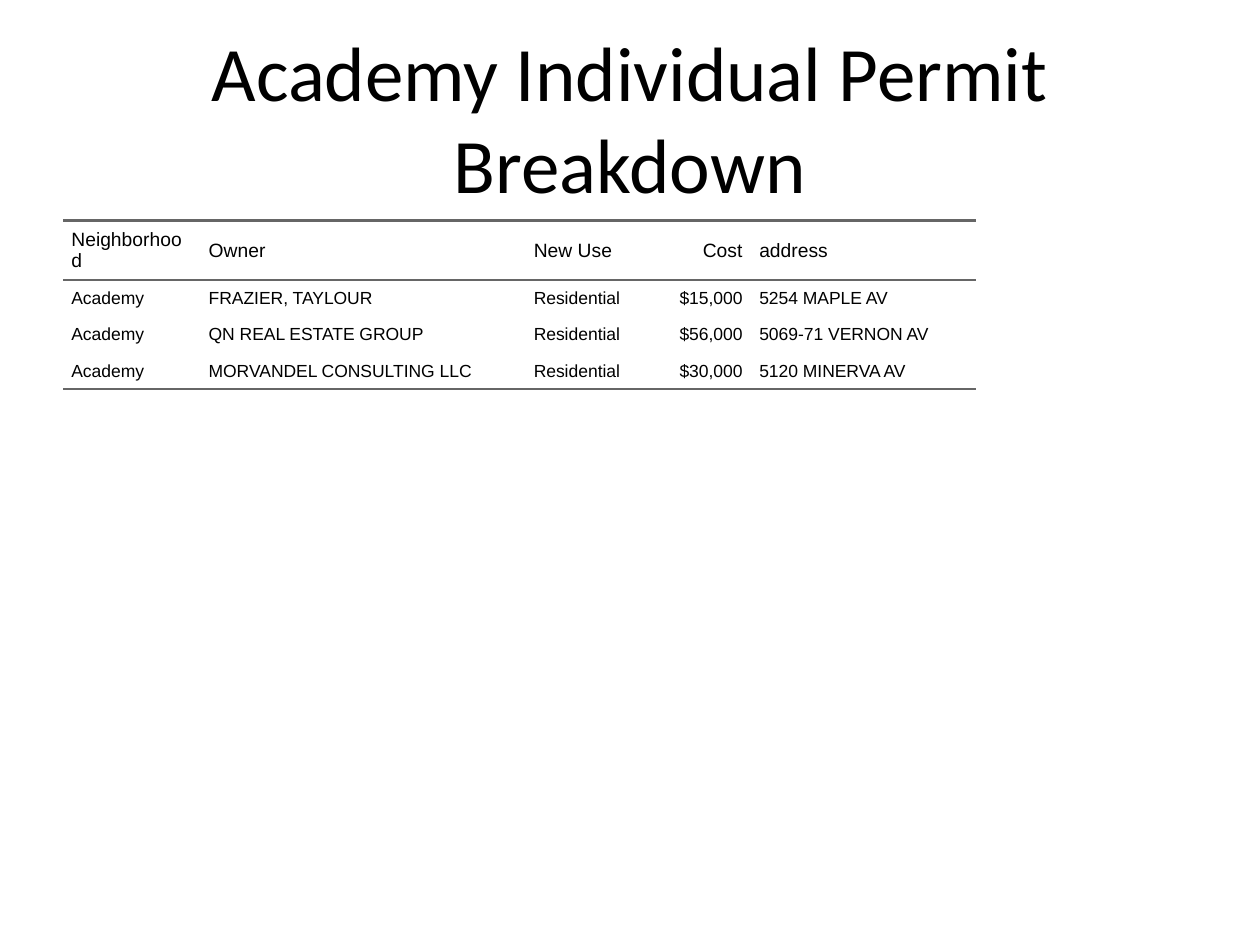
"""Build the Academy permit breakdown slide."""
from dataclasses import dataclass

from lxml import etree
from pptx import Presentation
from pptx.dml.color import RGBColor
from pptx.enum.text import MSO_ANCHOR, PP_ALIGN
from pptx.oxml.ns import qn
from pptx.util import Inches, Pt

MIDDLE = MSO_ANCHOR.MIDDLE
LEFT, CENTER, RIGHT = PP_ALIGN.LEFT, PP_ALIGN.CENTER, PP_ALIGN.RIGHT
PLAIN_STYLE = "{2D5ABB26-0587-4C30-8999-92F81FD0307C}"


@dataclass(frozen=True)
class Theme:
    """Fonts, sizes and colours of the slide."""
    title_font: str = "Calibri"
    table_font: str = "Arial"
    title_size: float = 44
    header_size: float = 11
    body_size: float = 10
    text: str = "000000"
    rule: str = "666666"
    rule_width: float = 1.5


THEME = Theme()
WIDTH, HEIGHT = Inches(10), Inches(7.5)
MARGIN = 0.05
TITLE_TOP, TITLE_HEIGHT = 0.04, 0.167
TABLE_TOP, TABLE_HEIGHT = 1.75, 4.95
COLUMNS = [1.09, 2.58, 1.04, 0.75, 1.79]
ROW_HEIGHT = 0.25
CELL_PAD = 4.8
CELL_SPACING = 5
COST_COLUMN = 3

ROWS = [
    ["Neighborhood", "Owner", "New Use", "Cost", "address"],
    ["Academy", "FRAZIER, TAYLOUR", "Residential", "$15,000", "5254 MAPLE AV"],
    ["Academy", "QN REAL ESTATE GROUP", "Residential", "$56,000", "5069-71 VERNON AV"],
    ["Academy", "MORVANDEL CONSULTING LLC", "Residential", "$30,000", "5120 MINERVA AV"],
]


def write(tf, text, font, size, align):
    """Set one paragraph of text and its format."""
    tf.text = text
    p = tf.paragraphs[0]
    p.alignment = align
    f = p.runs[0].font
    f.name, f.size, f.bold = font, Pt(size), False
    f.color.rgb = RGBColor.from_string(THEME.text)
    return p


def add_title(s, text):
    """Place and fill the title placeholder."""
    sp = s.shapes.title
    sp.left, sp.top = int(WIDTH * MARGIN), int(HEIGHT * TITLE_TOP)
    sp.width, sp.height = int(WIDTH * (1 - 2 * MARGIN)), int(HEIGHT * TITLE_HEIGHT)
    sp.text_frame.vertical_anchor = MIDDLE
    write(sp.text_frame, text, THEME.title_font, THEME.title_size, CENTER)


def add_rule(cell, side):
    """Draw a border line on one side of a cell."""
    pr = cell._tc.get_or_add_tcPr()
    ln = etree.SubElement(pr, qn(f"a:ln{side}"), w=str(Pt(THEME.rule_width)))
    fill = etree.SubElement(ln, qn("a:solidFill"))
    etree.SubElement(fill, qn("a:srgbClr"), val=THEME.rule)


def fill_cell(cell, text, size, align, sides):
    """Format one table cell."""
    p = write(cell.text_frame, text, THEME.table_font, size, align)
    p.space_before = p.space_after = Pt(CELL_SPACING)
    cell.vertical_anchor = MIDDLE
    cell.margin_left = cell.margin_right = Pt(CELL_PAD)
    cell.margin_top = cell.margin_bottom = Pt(CELL_PAD)
    for side in sides:
        add_rule(cell, side)
    cell.fill.background()


def add_permit_table(s, rows):
    """Add the permit table with ruled header and last row."""
    frame = s.shapes.add_table(
        len(rows), len(COLUMNS), int(WIDTH * MARGIN), Inches(TABLE_TOP),
        Inches(sum(COLUMNS)), Inches(ROW_HEIGHT * len(rows)))
    table = frame.table
    table.first_row = table.horz_banding = False
    table._tbl.tblPr.find(qn("a:tableStyleId")).text = PLAIN_STYLE
    for column, width in zip(table.columns, COLUMNS):
        column.width = Inches(width)
    frame.width, frame.height = int(WIDTH * (1 - 2 * MARGIN)), Inches(TABLE_HEIGHT)
    rules = {0: "TB", len(rows) - 1: "B"}
    for i, row in enumerate(rows):
        size = THEME.body_size if i else THEME.header_size
        for j, text in enumerate(row):
            align = RIGHT if j == COST_COLUMN else LEFT
            fill_cell(table.cell(i, j), text, size, align, rules.get(i, ""))


def main():
    """Build and save the slide."""
    prs = Presentation()
    prs.slide_width, prs.slide_height = WIDTH, HEIGHT
    s = prs.slides.add_slide(prs.slide_layouts.get_by_name("Title Only"))
    add_title(s, "Academy Individual Permit Breakdown")
    add_permit_table(s, ROWS)
    prs.save("out.pptx")


if __name__ == "__main__":
    main()
